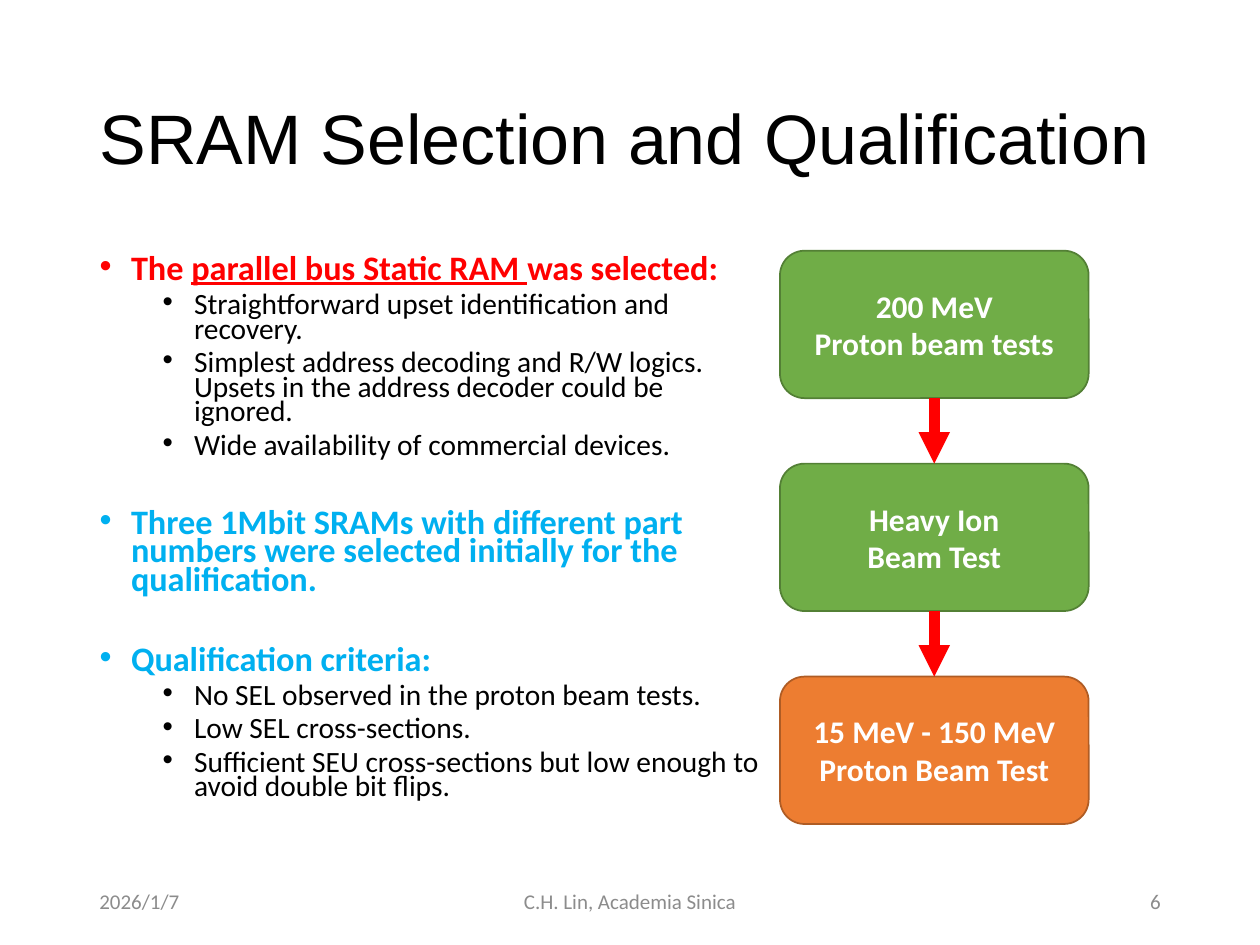
from lxml import etree
from pptx import Presentation
from pptx import util as u
from pptx.dml.color import RGBColor
from pptx.enum import shapes, text
from pptx.oxml.ns import qn

WIDTH, HEIGHT = 10, 7.5
MARGIN = 0.69
CONTENT_TOP = 1.99
COLORS = {
    "black": "000000", "white": "FFFFFF", "red": "FF0000", "blue": "00B0F0",
    "green": "70AD47", "green edge": "538035",
    "orange": "ED7D31", "orange edge": "AF5C24", "gray": "8C8C8C",
}

# Each section: heading runs as (text, underlined), color, sub-points
SECTIONS = [
    ([("The ", False), ("parallel bus Static RAM ", True), ("was selected:", False)], "red",
     ["Straightforward upset identification and recovery.",
      "Simplest address decoding and R/W logics. Upsets in the address decoder could be ignored.",
      "Wide availability of commercial devices."]),
    ([("Three 1Mbit SRAMs with different part numbers were selected initially "
       "for the qualification.", False)], "blue", []),
    ([("Qualification criteria:", False)], "blue",
     ["No SEL observed in the proton beam tests.",
      "Low SEL cross-sections.",
      "Sufficient SEU cross-sections but low enough to avoid double bit flips."]),
]
TESTS = [
    (["200 MeV", "Proton beam tests"], "green"),
    (["Heavy Ion", "Beam Test"], "green"),
    (["15 MeV - 150 MeV", "Proton Beam Test"], "orange"),
]


def rgb(name):
    return RGBColor.from_string(COLORS[name])


def place(shape, box):
    shape.left, shape.top, shape.width, shape.height = (u.Inches(value) for value in box)


def set_font(paragraph, size, color, bold=False, name="Calibri"):
    font = paragraph.font
    font.name, font.size, font.bold = name, u.Pt(size), bold
    font.color.rgb = rgb(color)


def set_bullet(paragraph, left):
    properties = paragraph._p.get_or_add_pPr()
    properties.set("marL", str(u.Inches(left)))
    properties.set("indent", str(u.Inches(-0.25)))
    etree.SubElement(properties, qn("a:buFont")).set("typeface", "Arial")
    etree.SubElement(properties, qn("a:buChar")).set("char", "•")


def add_title(slide, box, wording):
    title = slide.shapes.title
    place(title, box)
    frame = title.text_frame
    frame.text = wording
    frame.auto_size = text.MSO_AUTO_SIZE.NONE
    frame.vertical_anchor = text.MSO_ANCHOR.MIDDLE
    paragraph = frame.paragraphs[0]
    paragraph.alignment = text.PP_ALIGN.LEFT
    paragraph.line_spacing = 0.9
    set_font(paragraph, 40, "black", name="Arial")


def add_sections(slide, box):
    body = slide.placeholders[1]
    place(body, box)
    frame = body.text_frame
    frame.auto_size = text.MSO_AUTO_SIZE.NONE
    for index, (heading, color, points) in enumerate(SECTIONS):
        paragraph = frame.add_paragraph() if index else frame.paragraphs[0]
        set_bullet(paragraph, 0.25)
        paragraph.line_spacing = 0.7
        paragraph.space_before = u.Pt(29 if index else 0)
        set_font(paragraph, 19.6, color, bold=True)
        for wording, underlined in heading:
            run = paragraph.add_run()
            run.text = wording
            if underlined:
                run.font.underline = True
        for point in points:
            paragraph = frame.add_paragraph()
            paragraph.text = point
            paragraph.level = 1
            set_bullet(paragraph, 0.75)
            paragraph.line_spacing = 0.7
            paragraph.space_before = u.Pt(5)
            set_font(paragraph, 16.8, "black")


def add_test_box(slide, box, lines, color):
    shape = slide.shapes.add_shape(
        shapes.MSO_SHAPE.ROUNDED_RECTANGLE, *(u.Inches(value) for value in box))
    shape.shadow.inherit = False
    shape.fill.solid()
    shape.fill.fore_color.rgb = rgb(color)
    shape.line.color.rgb = rgb(color + " edge")
    shape.line.width = u.Pt(1)
    frame = shape.text_frame
    frame.text = "\n".join(lines)
    frame.vertical_anchor = text.MSO_ANCHOR.MIDDLE
    for paragraph in frame.paragraphs:
        paragraph.alignment = text.PP_ALIGN.CENTER
        set_font(paragraph, 18, "white", bold=True)
    return shape


def add_arrow(slide, upper, lower):
    arrow = slide.shapes.add_connector(shapes.MSO_CONNECTOR.STRAIGHT, 0, 0, 0, 0)
    arrow.begin_connect(upper, 2)  # bottom centre
    arrow.end_connect(lower, 0)  # top centre
    arrow.line.color.rgb = rgb("red")
    arrow.line.width = u.Pt(6)
    etree.SubElement(arrow.line._get_or_add_ln(), qn("a:tailEnd")).set("type", "triangle")
    etree.SubElement(arrow._element.spPr, qn("a:effectLst"))


def add_test_flow(slide, box):
    left, top, width, height = box
    box_height = 1.17
    pitch = (height - box_height) / (len(TESTS) - 1)
    steps = [add_test_box(slide, (left, top + row * pitch, width, box_height), lines, color)
             for row, (lines, color) in enumerate(TESTS)]
    for upper, lower in zip(steps, steps[1:]):
        add_arrow(slide, upper, lower)


def add_footer(slide, box):
    left, top, width, height = box
    side, middle = 2.25, 3.38
    parts = [
        ("2026/1/7", left, side, text.PP_ALIGN.LEFT),
        ("C.H. Lin, Academia Sinica", left + (width - middle) / 2, middle, text.PP_ALIGN.CENTER),
        ("6", left + width - side, side, text.PP_ALIGN.RIGHT),
    ]
    for wording, part_left, part_width, alignment in parts:
        part = slide.shapes.add_textbox(
            *(u.Inches(value) for value in (part_left, top, part_width, height)))
        frame = part.text_frame
        frame.word_wrap = True
        frame.vertical_anchor = text.MSO_ANCHOR.MIDDLE
        frame.text = wording
        frame.paragraphs[0].alignment = alignment
        set_font(frame.paragraphs[0], 12, "gray")


def main():
    presentation = Presentation()
    presentation.slide_width, presentation.slide_height = u.Inches(WIDTH), u.Inches(HEIGHT)
    slide = presentation.slides.add_slide(presentation.slide_layouts[1])
    full_width = WIDTH - 2 * MARGIN
    list_width = 5.5
    add_title(slide, (MARGIN, 0.4, full_width, 1.45), "SRAM Selection and Qualification")
    add_sections(slide, (MARGIN, CONTENT_TOP, list_width, 4.77))
    add_test_flow(slide, (MARGIN + list_width, CONTENT_TOP, 2.45, 4.55))
    add_footer(slide, (MARGIN, 6.95, full_width, 0.4))
    presentation.save("out.pptx")


if __name__ == "__main__":
    main()
